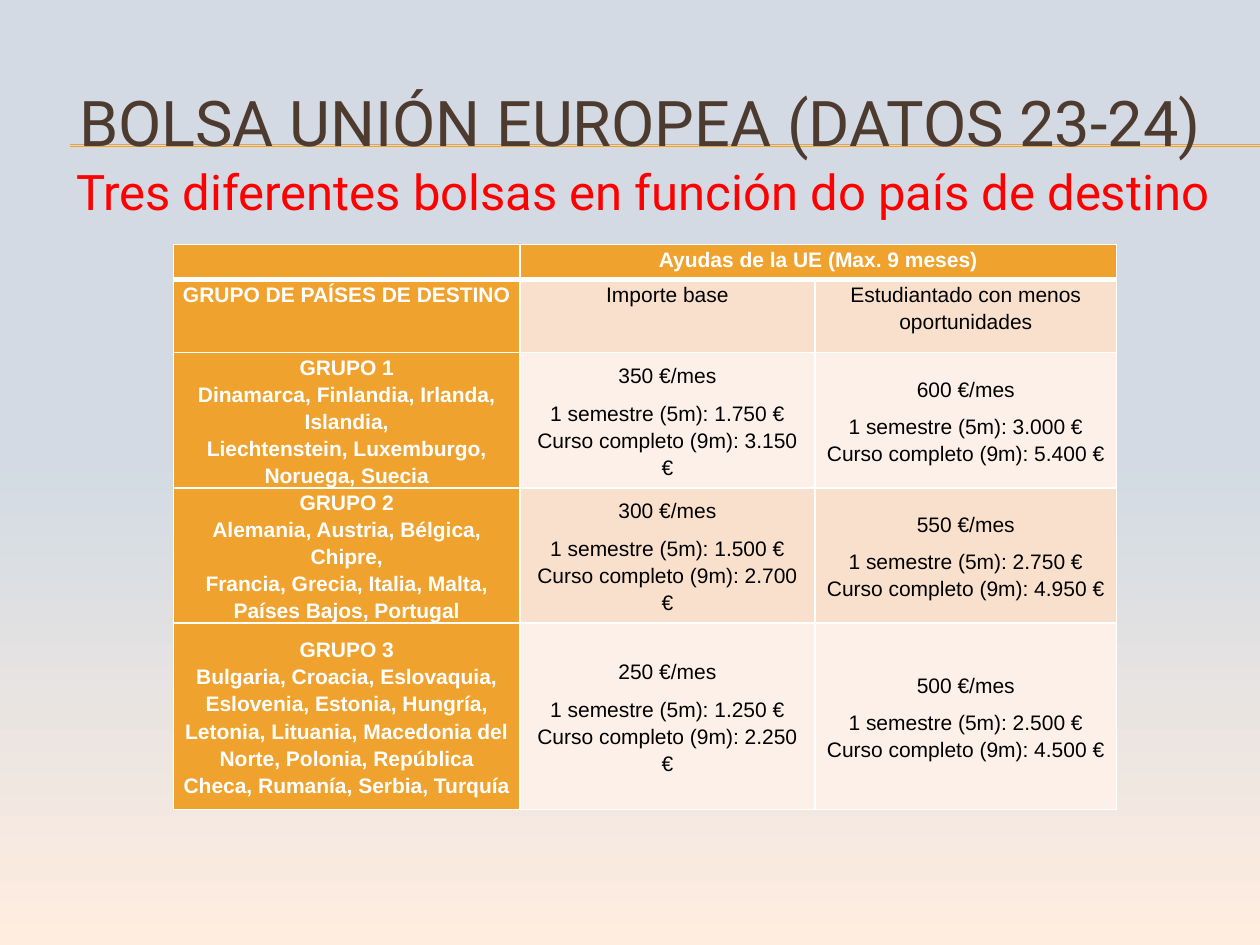
from copy import deepcopy
from dataclasses import dataclass

from lxml import etree
from pptx import Presentation
from pptx.dml.color import RGBColor
from pptx.enum import shapes, text
from pptx.oxml.ns import qn
from pptx.util import Cm, Pt


@dataclass(frozen=True)
class Theme:
    heading_font: str = "Roboto"
    table_font: str = "Arial"
    title_size: int = 36
    subtitle_size: int = 28
    table_size: int = 12
    title: str = "4E3B30"
    subtitle: str = "FF0000"
    accent: str = "F0A22E"
    bands: tuple = ("F9E0CD", "FCF0E8")
    white: str = "FFFFFF"
    black: str = "000000"
    background: tuple = ((0, "D4DAE4"), (0.5, "D3DBE3"), (1, "FFEDE0"))


THEME = Theme()
TITLE = "BOLSA UNIÓN EUROPEA (DATOS 23-24)"
SUBTITLE = "Tres diferentes bolsas en función do país de destino"
HEADERS = [
    [[], ["Ayudas de la UE (Max. 9 meses)"], []],
    [["GRUPO DE PAÍSES DE DESTINO"], ["Importe base"],
     ["Estudiantado con menos oportunidades"]],
]
# Countries, then (month, semester, full year) for each kind of grant
GROUPS = [
    (["Dinamarca, Finlandia, Irlanda, Islandia,",
      "Liechtenstein, Luxemburgo, Noruega, Suecia"],
     ("350", "1.750", "3.150"), ("600", "3.000", "5.400")),
    (["Alemania, Austria, Bélgica, Chipre,",
      "Francia, Grecia, Italia, Malta,",
      "Países Bajos, Portugal"],
     ("300", "1.500", "2.700"), ("550", "2.750", "4.950")),
    (["Bulgaria, Croacia, Eslovaquia, Eslovenia, Estonia, Hungría, "
      "Letonia, Lituania, Macedonia del Norte, Polonia, República Checa, "
      "Rumanía, Serbia, Turquía"],
     ("250", "1.250", "2.250"), ("500", "2.500", "4.500")),
]
COLUMNS = (6.98, 5.95, 6.08)
ROWS = (0.71, 1.47, 2.54, 2.54, 3.76)


def rgb(value):
    return RGBColor.from_string(value)


def style(p, font, size, color, bold=False):
    p.alignment = text.PP_ALIGN.CENTER
    p.font.name, p.font.size, p.font.bold = font, Pt(size), bold
    p.font.color.rgb = rgb(color)


def set_background(slide):
    fill = slide.background.fill
    fill.gradient()
    fill.gradient_angle = 270
    first = fill.gradient_stops[0].color  # noqa: checks that stops exist
    stops = slide.background.fill._fill._gradFill.find(qn("a:gsLst"))
    stops.insert(1, deepcopy(stops[0]))
    for stop, (position, color) in zip(fill.gradient_stops, THEME.background):
        stop.position = position
        stop.color.rgb = rgb(color)


def add_rule(slide, y):
    """Draw a thin line to the right edge, behind everything else."""
    rule = slide.shapes.add_connector(
        shapes.MSO_CONNECTOR.STRAIGHT, Cm(1.42), Cm(y), Cm(25.4), Cm(y))
    rule.line.color.rgb = rgb(THEME.accent)
    rule.line.width = Pt(0.75)
    etree.SubElement(rule._element.spPr, qn("a:effectLst"))
    slide.shapes._spTree.insert(2, rule._element)


def fill_placeholder(sp, words, box, size, color):
    sp.left, sp.top, sp.width, sp.height = map(Cm, box)
    tf = sp.text_frame
    tf.text = words
    tf.auto_size = text.MSO_AUTO_SIZE.NONE
    p = tf.paragraphs[0]
    style(p, THEME.heading_font, size, color)
    return p


def set_borders(cell, top, bottom):
    tcPr = cell._tc.get_or_add_tcPr()
    sides = (("L", 1), ("R", 1), ("T", top), ("B", bottom))
    for i, (side, width) in enumerate(sides):
        ln = etree.Element(qn(f"a:ln{side}"), w=str(Pt(width)))
        solid = etree.SubElement(ln, qn("a:solidFill"))
        etree.SubElement(solid, qn("a:srgbClr"), val=THEME.white)
        tcPr.insert(i, ln)


def amounts(month, semester, year):
    return [f"{month} €/mes", f"1 semestre (5m): {semester} €",
            f"Curso completo (9m): {year} €"]


def fill_cell(cell, lines, row, col):
    heading = row == 0 or col == 0
    cell.margin_left = cell.margin_right = Cm(0.18)
    cell.margin_top = cell.margin_bottom = 0
    grouped = row >= len(HEADERS)
    cell.vertical_anchor = (text.MSO_ANCHOR.MIDDLE if grouped
                            else text.MSO_ANCHOR.TOP)
    cell.fill.solid()
    cell.fill.fore_color.rgb = rgb(
        THEME.accent if heading else THEME.bands[(row - 1) % 2])
    set_borders(cell, 3 if row == 1 else 1, 3 if row == 0 else 1)
    cell.text_frame.text = "\n".join(lines)
    for p in cell.text_frame.paragraphs:
        style(p, THEME.table_font, THEME.table_size,
              THEME.white if heading else THEME.black, heading)
        p.line_spacing = 1.15
    if grouped and not heading:
        cell.text_frame.paragraphs[0].space_after = Pt(6)


def add_grants_table(slide):
    rows = HEADERS + [
        [[f"GRUPO {n}", *countries], amounts(*base), amounts(*extra)]
        for n, (countries, base, extra) in enumerate(GROUPS, 1)]
    table = slide.shapes.add_table(
        len(ROWS), len(COLUMNS), Cm(3.5), Cm(4.93),
        Cm(sum(COLUMNS)), Cm(sum(ROWS))).table
    for column, width in zip(table.columns, COLUMNS):
        column.width = Cm(width)
    for row, height in zip(table.rows, ROWS):
        row.height = Cm(height)
    for r, row in enumerate(rows):
        for c, lines in enumerate(row):
            fill_cell(table.cell(r, c), lines, r, c)
    table.cell(0, 1).merge(table.cell(0, 2))


def main():
    prs = Presentation()
    prs.slide_width, prs.slide_height = Cm(25.4), Cm(19.05)
    slide = prs.slides.add_slide(prs.slide_layouts[1])
    set_background(slide)
    for y in (2.92, 2.95):
        add_rule(slide, y)
    title, body = slide.placeholders
    fill_placeholder(title, TITLE, (0.84, 1.27, 24.13, 2.34),
                     THEME.title_size, THEME.title)
    p = fill_placeholder(body, SUBTITLE, (0.89, 3.12, 24.13, 16.61),
                         THEME.subtitle_size, THEME.subtitle)
    p.space_before = Pt(5.6)
    pPr = p._p.get_or_add_pPr()
    pPr.set("marL", str(Cm(0.95)))
    pPr.set("indent", str(Cm(-0.95)))
    pPr.insert_element_before(etree.Element(qn("a:buNone")),
                              "a:tabLst", "a:defRPr", "a:extLst")
    add_grants_table(slide)
    prs.save("out.pptx")


if __name__ == "__main__":
    main()
